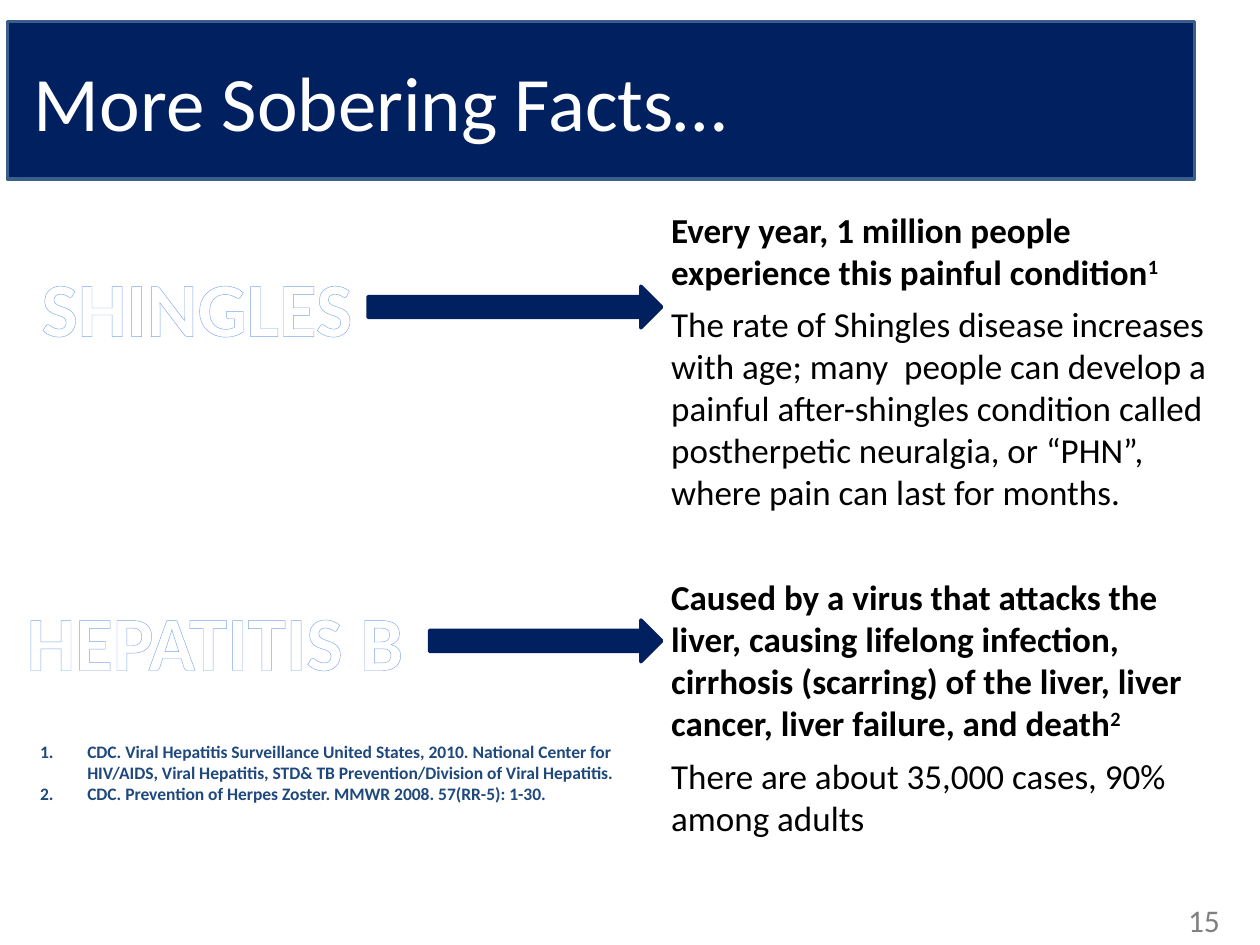
from lxml.etree import SubElement, fromstring
from pptx import Presentation
from pptx.dml.color import RGBColor
from pptx.enum.shapes import MSO_SHAPE as Shape
from pptx.enum.text import MSO_ANCHOR as Anchor, MSO_AUTO_SIZE as AutoSize, PP_ALIGN as Align
from pptx.oxml.ns import nsdecls, qn
from pptx.util import Cm, Pt

COLORS = {
    "navy": "002060", "edge": "3A5F8C", "white": "FFFFFF", "black": "000000",
    "outline": "7EA6EA", "blue": "1F497D", "gray": "808080",
}
FONT = "Calibri"
TITLE = "More Sobering Facts…"
PAGE_NUMBER = "15"

FACTS = [
    ("Every year, 1 million people experience this painful condition", "1", 0),
    ("The rate of Shingles disease increases with age; many  people can develop a painful "
     "after-shingles condition called postherpetic neuralgia, or “PHN”, where pain can last "
     "for months.", "", 3),
    ("Caused by a virus that attacks the liver, causing lifelong infection, cirrhosis "
     "(scarring) of the liver, liver cancer, liver failure, and death", "2", 33),
    ("There are about 35,000 cases, 90% among adults", "", 3),
]
DISEASES = [
    ("SHINGLES", (0.56, 5.11, 6.83, 2.13), 7.42),
    ("HEPATITIS B", (0.25, 11.84, 8.18, 2.13), 8.66),
]
REFERENCES = [
    "CDC. Viral Hepatitis Surveillance United States, 2010. National Center for HIV/AIDS, "
    "Viral Hepatitis, STD& TB Prevention/Division of Viral Hepatitis.",
    "CDC. Prevention of Herpes Zoster. MMWR 2008. 57(RR-5): 1-30.",
]
ARROW_END = 13.34
ARROW_HEIGHT = 0.84
ARROW_DROP = 0.66


def color(name):
    return RGBColor.from_string(COLORS[name])


def style(span, size, tone, bold=False):
    span.font.name = FONT
    span.font.size = Pt(size)
    span.font.bold = bold
    span.font.color.rgb = color(tone)


def add_shape(page, kind, place, line):
    shape = page.shapes.add_shape(kind, *map(Cm, place))
    shape.shadow.inherit = False
    shape.fill.solid()
    shape.fill.fore_color.rgb = color("navy")
    shape.line.color.rgb = color(line)
    shape.line.width = Pt(2)
    return shape


def add_box(page, place, texts, size, tone, bold=False, wrap=True):
    box = page.shapes.add_textbox(*map(Cm, place))
    frame = box.text_frame
    frame.word_wrap = wrap
    frame.text = "\n".join(texts)
    for para in frame.paragraphs:
        for span in para.runs:
            style(span, size, tone, bold)
    return box


def add_title(page):
    banner = add_shape(page, Shape.RECTANGLE, (0.15, 0.43, 23.93, 3.18), "edge")
    title = page.shapes.title
    title.element.addprevious(banner.element)
    title.left, title.top, title.width, title.height = map(Cm, (0.43, 0.43, 22.86, 3.18))
    frame = title.text_frame
    frame.text = TITLE
    frame.vertical_anchor = Anchor.MIDDLE
    para = frame.paragraphs[0]
    para.alignment = Align.LEFT
    style(para.runs[0], 44, "white")


def add_facts(page):
    texts = [text for text, _, _ in FACTS]
    box = add_box(page, (13.28, 4.07, 11.43, 14.35), texts, 20, "black")
    for para, (_, note, gap) in zip(box.text_frame.paragraphs, FACTS):
        para.space_before = Pt(gap)
        para.space_after = Pt(3)
        if note:
            para.runs[0].font.bold = True
            mark = para.add_run()
            mark.text = note
            style(mark, 20, "black", True)
            mark._r.get_or_add_rPr().set("baseline", "30000")


def add_disease(page, name, place, arrow_left):
    box = add_box(page, place, [name], 44, "white", True, wrap=False)
    box.text_frame.auto_size = AutoSize.SHAPE_TO_FIT_TEXT
    para = box.text_frame.paragraphs[0]
    para.alignment = Align.CENTER
    outline = fromstring(
        f'<a:ln {nsdecls("a")} w="{Pt(2.48)}"><a:solidFill>'
        f'<a:srgbClr val="{COLORS["outline"]}"/></a:solidFill></a:ln>')
    para.runs[0]._r.get_or_add_rPr().insert(0, outline)
    arrow = (arrow_left, place[1] + ARROW_DROP, ARROW_END - arrow_left, ARROW_HEIGHT)
    add_shape(page, Shape.RIGHT_ARROW, arrow, "navy")


def add_references(page):
    box = add_box(page, (0.56, 14.81, 12.78, 1.88), REFERENCES, 10, "blue", True)
    box.text_frame.auto_size = AutoSize.SHAPE_TO_FIT_TEXT
    for para in box.text_frame.paragraphs:
        props = para._p.get_or_add_pPr()
        props.set("marL", str(Cm(0.95)))
        props.set("indent", str(-Cm(0.95)))
        SubElement(props, qn("a:buFont"), typeface="+mj-lt")
        SubElement(props, qn("a:buAutoNum"), type="arabicPeriod")
        tabs = SubElement(props, qn("a:tabLst"))
        SubElement(tabs, qn("a:tab"), pos=str(Cm(1.27)), algn="l")


def main():
    deck = Presentation()
    deck.slide_width, deck.slide_height = Cm(25.4), Cm(19.05)
    page = deck.slides.add_slide(deck.slide_layouts[5])
    add_title(page)
    add_facts(page)
    for disease in DISEASES:
        add_disease(page, *disease)
    add_references(page)
    add_box(page, (23.7, 18.03, 1.7, 1.02), [PAGE_NUMBER], 18, "gray")
    deck.save("out.pptx")


if __name__ == "__main__":
    main()
